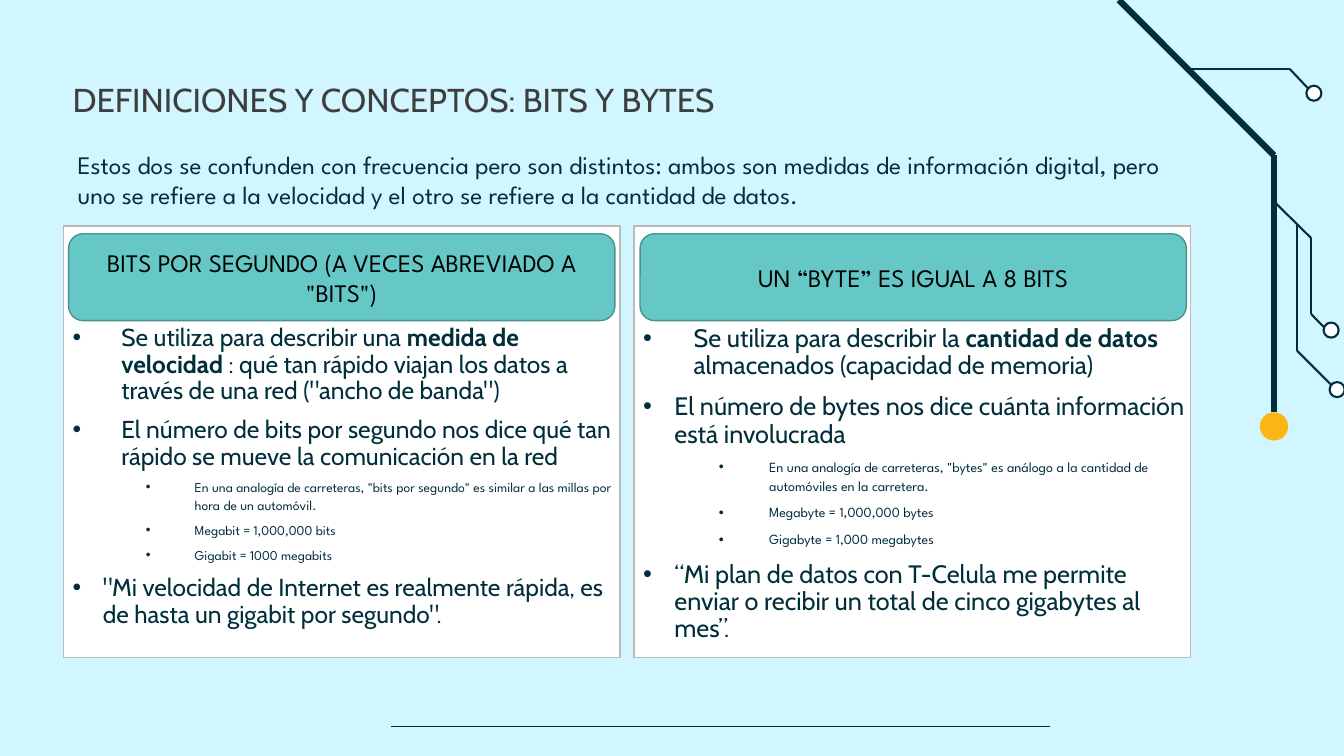
from dataclasses import dataclass
from typing import Any

from lxml import etree
from pptx import Presentation
from pptx.dml.color import RGBColor
from pptx.enum import shapes, text
from pptx.oxml import ns
from pptx.util import Pt

COLORS = {
    "background": "D2F6FF", "circuit": "002F3B", "rule": "002A35",
    "amber": "FCB613", "white": "FFFFFF", "border": "BABABA",
    "title": "3E3E3E", "teal": "65C7C6", "teal_line": "4A9190", "black": "000000",
}
BODY_FONT, WIDE_FONT = "Cabin", "League Spartan"
INSET = 3.6


@dataclass(frozen=True)
class Trace:
    points: tuple[tuple[float, float], ...]
    width: float = 1.5
    color: str = "circuit"


@dataclass(frozen=True)
class Node:
    x: float
    y: float
    diameter: float = 10.8
    fill: str = "white"
    line: str | None = "circuit"


@dataclass(frozen=True)
class BulletStyle:
    margin: float
    hanging: float
    size: float = 18
    font: str = BODY_FONT
    line_spacing: float = 0.9
    level: int = 0


WIDE = BulletStyle(36, 36)
NARROW = BulletStyle(22.3, 22.3)
DETAIL = BulletStyle(90, 36, 10, WIDE_FONT, 1.1, 1)


@dataclass(frozen=True)
class Panel:
    left: float
    heading_left: float
    bullets_left: float
    heading: str
    bullets: tuple[tuple[BulletStyle, str], ...]
    scale: float
    space: float
    detail_space: float


TRACES = (
    Trace(((799.2, 0), (910, 111), (910, 294.5)), 4.5),
    Trace(((850, 49), (921, 49), (934.6, 63.4))),
    Trace(((909.4, 143.3), (936.5, 170), (936.5, 224.3), (946, 234))),
    Trace(((926.5, 160), (926.5, 250.5), (951, 275))),
    Trace(((279.4, 518.6), (750.2, 518.6)), 0.5, "rule"),
)
NODES = (
    Node(910, 304.6, 20.2, "amber", None),
    Node(938.5, 66.6),
    Node(950.8, 235.8),
    Node(955.1, 278.3),
)
# Text between ** marks is bold.
PANELS = (
    Panel(45.4, 49, 48.2, 'BITS POR SEGUNDO (A VECES ABREVIADO A "BITS")', (
        (WIDE, "Se utiliza para describir una **medida de velocidad** : qué tan rápido "
               'viajan los datos a través de una red ("ancho de banda")'),
        (WIDE, "El número de bits por segundo nos dice qué tan rápido se mueve "
               "la comunicación en la red"),
        (DETAIL, 'En una analogía de carreteras, "bits por segundo" es similar '
                 "a las millas por hora de un automóvil."),
        (DETAIL, "Megabit = 1,000,000 bits"),
        (DETAIL, "Gigabit = 1000 megabits"),
        (NARROW, '"Mi velocidad de Internet es realmente rápida, es de hasta '
                 'un gigabit por segundo".'),
    ), 0.97, 9, 5),
    Panel(452.9, 457.2, 455.8, "UN “BYTE” ES IGUAL A 8 BITS", (
        (WIDE, "Se utiliza para describir la **cantidad de datos **almacenados "
               "(capacidad de memoria)"),
        (NARROW, "El número de bytes nos dice cuánta información está involucrada"),
        (DETAIL, 'En una analogía de carreteras, "bytes" es análogo a la cantidad '
                 "de automóviles en la carretera."),
        (DETAIL, "Megabyte = 1,000,000 bytes"),
        (DETAIL, "Gigabyte = 1,000 megabytes"),
        (NARROW, "“Mi plan de datos con T-Celula me permite enviar o recibir "
                 "un total de cinco gigabytes al mes”."),
    ), 1, 10, 6),
)


def rgb(name: str) -> RGBColor:
    return RGBColor.from_string(COLORS[name])


def set_values(target: Any, values: dict[str, Any]) -> None:
    for name, value in values.items():
        setattr(target, name, value)


def set_frame(frame: Any, inset: float = INSET, anchor: Any = text.MSO_ANCHOR.TOP) -> None:
    margins = {f"margin_{side}": Pt(inset) for side in ("left", "top", "right", "bottom")}
    set_values(frame, {"word_wrap": True, "vertical_anchor": anchor, **margins})


def add_run(paragraph: Any, words: str, size: float, font: str, color: str,
            bold: bool = False) -> None:
    run = paragraph.add_run()
    run.text = words
    set_values(run.font, {"size": Pt(size), "name": font, "bold": bold})
    run.font.color.rgb = rgb(color)


def add_box(slide: Any, left: float, top: float, width: float, height: float,
            anchor: Any = text.MSO_ANCHOR.TOP) -> Any:
    """Add a wrapping text box and return its text frame."""
    frame = slide.shapes.add_textbox(Pt(left), Pt(top), Pt(width), Pt(height)).text_frame
    set_frame(frame, anchor=anchor)
    return frame


def add_filled(slide: Any, kind: Any, bounds: tuple[float, ...], fill: str,
               line: str | None, line_width: float = 1) -> Any:
    shape = slide.shapes.add_shape(kind, *map(Pt, bounds))
    shape.shadow.inherit = False
    shape.fill.solid()
    shape.fill.fore_color.rgb = rgb(fill)
    if line:
        shape.line.color.rgb = rgb(line)
        shape.line.width = Pt(line_width)
    else:
        shape.line.fill.background()
    return shape


def add_trace(slide: Any, trace: Trace) -> None:
    for start, end in zip(trace.points, trace.points[1:]):
        connector = slide.shapes.add_connector(
            shapes.MSO_CONNECTOR.STRAIGHT, *map(Pt, start + end))
        connector.line.color.rgb = rgb(trace.color)
        connector.line.width = Pt(trace.width)
        etree.SubElement(connector._element.spPr, ns.qn("a:effectLst"))


def add_node(slide: Any, node: Node) -> None:
    radius = node.diameter / 2
    bounds = (node.x - radius, node.y - radius, node.diameter, node.diameter)
    add_filled(slide, shapes.MSO_SHAPE.OVAL, bounds, node.fill, node.line, 1.5)


def add_bullet(paragraph: Any, style: BulletStyle, words: str, scale: float) -> None:
    properties = paragraph._p.get_or_add_pPr()
    properties.set("marL", str(Pt(style.margin * scale)))
    properties.set("indent", str(-Pt(style.hanging * scale)))
    etree.SubElement(properties, ns.qn("a:buFont"), typeface="Arial")
    etree.SubElement(properties, ns.qn("a:buChar"), char="•")
    set_values(paragraph, {"level": style.level, "line_spacing": style.line_spacing})
    for index, part in enumerate(words.split("**")):
        add_run(paragraph, part, round(style.size * scale, 1), style.font,
                "circuit", bold=index % 2 == 1)


def add_panel(slide: Any, panel: Panel) -> None:
    add_filled(slide, shapes.MSO_SHAPE.RECTANGLE, (panel.left, 161.3, 397.4, 308.2),
               "white", "border")
    heading = add_filled(slide, shapes.MSO_SHAPE.ROUNDED_RECTANGLE,
                         (panel.heading_left, 167, 390.2, 62), "teal", "teal_line")
    set_frame(heading.text_frame, 7.2, text.MSO_ANCHOR.MIDDLE)
    title = heading.text_frame.paragraphs[0]
    title.alignment = text.PP_ALIGN.CENTER
    add_run(title, panel.heading, 18, WIDE_FONT, "black")

    frame = add_box(slide, panel.bullets_left, 229, 397.4, 240)
    for index, (style, words) in enumerate(panel.bullets):
        paragraph = frame.add_paragraph() if index else frame.paragraphs[0]
        add_bullet(paragraph, style, words, panel.scale)
        if index:
            paragraph.space_before = Pt(panel.detail_space if style.level else panel.space)


def main() -> None:
    presentation = Presentation()
    set_values(presentation, {"slide_width": Pt(960), "slide_height": Pt(540)})
    slide = presentation.slides.add_slide(presentation.slide_layouts[6])
    slide.background.fill.solid()
    slide.background.fill.fore_color.rgb = rgb("background")

    for trace in TRACES:
        add_trace(slide, trace)
    for node in NODES:
        add_node(slide, node)

    title = add_box(slide, 48.2, 54.7, 792.7, 35.3, text.MSO_ANCHOR.MIDDLE).paragraphs[0]
    title.line_spacing = 0.9
    add_run(title, "DEFINICIONES Y CONCEPTOS: BITS Y BYTES", 23.6, BODY_FONT, "title")
    introduction = add_box(slide, 51.8, 103, 787, 51).paragraphs[0]
    add_run(introduction, "Estos dos se confunden con frecuencia pero son distintos: ambos son "
            "medidas de información digital, pero uno se refiere a la velocidad y el otro "
            "se refiere a la cantidad de datos.", 18, WIDE_FONT, "circuit")
    for panel in PANELS:
        add_panel(slide, panel)
    presentation.save("out.pptx")


if __name__ == "__main__":
    main()
